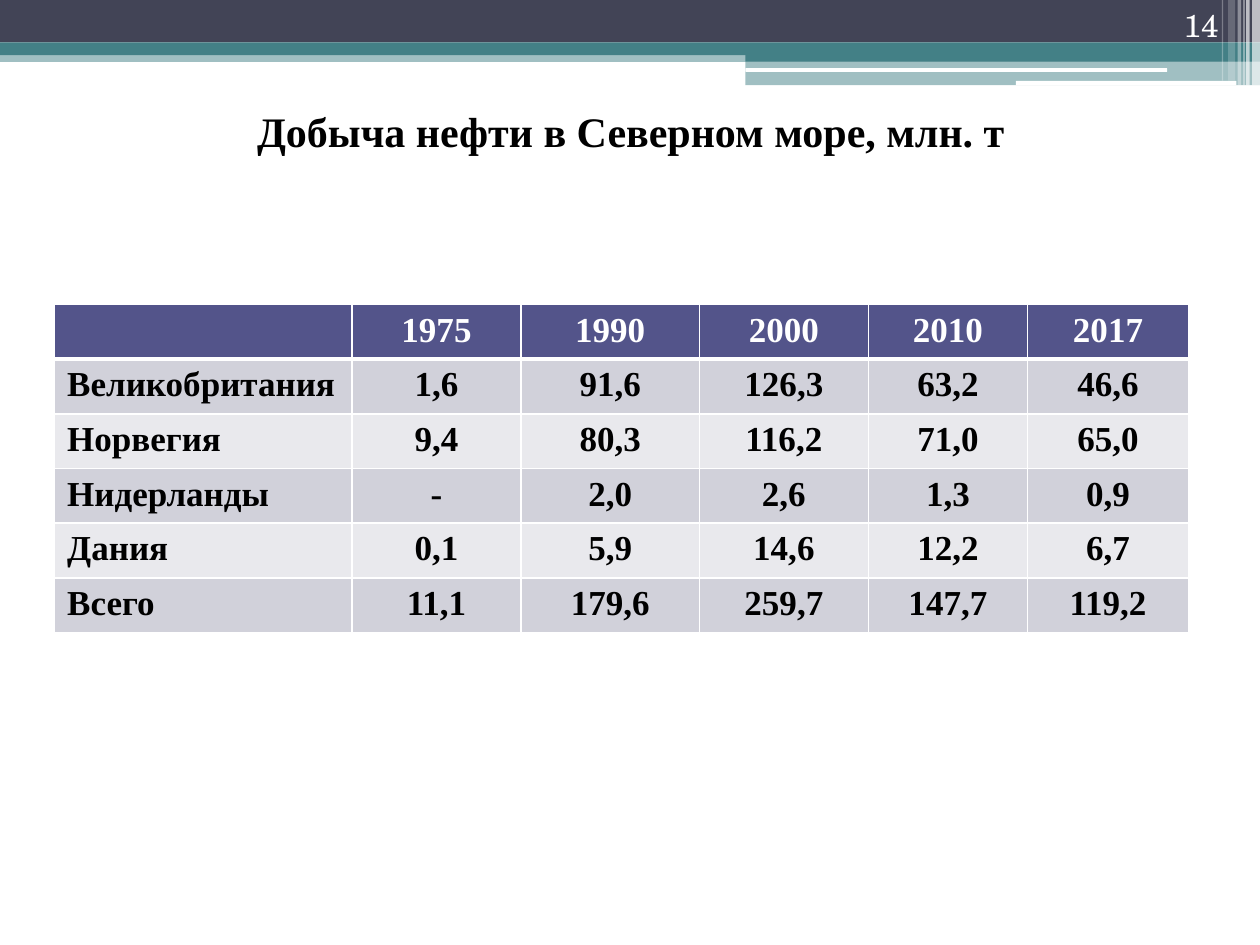
from dataclasses import dataclass

from lxml import etree
from pptx import Presentation
from pptx.dml.color import RGBColor
from pptx.enum.shapes import MSO_SHAPE
from pptx.enum.text import MSO_ANCHOR, PP_ALIGN
from pptx.oxml.ns import qn
from pptx.util import Pt

RECT, ROUND = MSO_SHAPE.RECTANGLE, MSO_SHAPE.ROUNDED_RECTANGLE
LEFT, CENTER, RIGHT = PP_ALIGN.LEFT, PP_ALIGN.CENTER, PP_ALIGN.RIGHT
MIDDLE, BOTTOM = MSO_ANCHOR.MIDDLE, MSO_ANCHOR.BOTTOM


@dataclass(frozen=True)
class Theme:
    navy: str = "424456"
    teal: str = "438086"
    white: str = "FFFFFF"
    black: str = "000000"
    head: str = "53548A"
    bands: tuple = ("D1D1DA", "E9E9ED")
    font: str = "Times New Roman"
    number_font: str = "TeX Gyre Schola"
    title_size: int = 24
    table_size: int = 20
    number_size: int = 18


THEME = Theme()

TITLE = "Добыча нефти в Северном море, млн. т"
ROWS = [
    ("", "1975", "1990", "2000", "2010", "2017"),
    ("Великобритания", "1,6", "91,6", "126,3", "63,2", "46,6"),
    ("Норвегия", "9,4", "80,3", "116,2", "71,0", "65,0"),
    ("Нидерланды", "-", "2,0", "2,6", "1,3", "0,9"),
    ("Дания", "0,1", "5,9", "14,6", "12,2", "6,7"),
    ("Всего", "11,1", "179,6", "259,7", "147,7", "119,2"),
]
COL_WIDTHS = (170, 96.5, 102, 96.5, 91, 92)
ROW_HEIGHT = 29.3


def style_paragraph(p, font, size, color, align, bold=False):
    p.alignment = align
    p.font.name, p.font.size, p.font.bold = font, Pt(size), bold
    p.font.color.rgb = RGBColor.from_string(color)


def add_bar(slide, x, y, w, h, color, opacity=100, kind=RECT):
    sp = slide.shapes.add_shape(kind, Pt(x), Pt(y), Pt(w), Pt(h))
    sp.shadow.inherit = False
    sp.line.fill.background()
    sp.fill.solid()
    sp.fill.fore_color.rgb = RGBColor.from_string(color)
    if opacity < 100:
        clr = sp.fill._xPr.find(f".//{qn('a:srgbClr')}")
        etree.SubElement(clr, qn("a:alpha"), val=str(opacity * 1000))


def add_text(slide, box, text, anchor, **style):
    s = slide.shapes.add_textbox(*map(Pt, box))
    tf = s.text_frame
    tf.word_wrap = True
    tf.vertical_anchor = anchor
    p = tf.paragraphs[0]
    p.text = text
    style_paragraph(p, **style)


def add_banner(slide, x, y, w):
    # Full-width bands
    add_bar(slide, x, y + 28.8, w, 6.6, THEME.teal, 50)
    add_bar(slide, x, y, w, 24.3, THEME.navy)
    add_bar(slide, x, y + 24.3, w, 7.2, THEME.teal)

    # Deeper block on the right
    block_w = 294
    block_x = x + w - block_w
    add_bar(slide, block_x, y + 28.1, block_w, 7.2, THEME.teal)
    add_bar(slide, block_x, y + 35.3, block_w, 13.4, THEME.teal, 50)
    add_bar(slide, block_x, y + 38.9, 241, 2.2, THEME.white, kind=ROUND)
    add_bar(slide, x + w - 139.5, y + 46.2, 126, 2.6, THEME.white, kind=ROUND)

    # Pale vertical stripes: distance from right edge, width, height, opacity
    stripes = [(4.5, 4.5, 48.9, 65), (7.9, 2, 48.9, 65), (9.5, 0.7, 48.9, 60),
               (12.8, 2, 48.9, 40), (18.2, 4, 46.1, 20), (21.8, 0.7, 46.1, 30)]
    for offset, width, height, opacity in stripes:
        add_bar(slide, x + w - offset, y, width, height, THEME.white, opacity)


def set_borders(cell, top, bottom):
    tc_pr = cell._tc.get_or_add_tcPr()
    for side, width in (("L", 1), ("R", 1), ("T", top), ("B", bottom)):
        ln = etree.SubElement(tc_pr, qn(f"a:ln{side}"), w=str(Pt(width)))
        fill = etree.SubElement(ln, qn("a:solidFill"))
        etree.SubElement(fill, qn("a:srgbClr"), val=THEME.white)


def add_production_table(slide, x, y):
    frame = slide.shapes.add_table(len(ROWS), len(COL_WIDTHS), Pt(x), Pt(y),
                                   Pt(sum(COL_WIDTHS)), Pt(ROW_HEIGHT * len(ROWS)))
    table = frame.table
    for col, width in zip(table.columns, COL_WIDTHS):
        col.width = Pt(width)
    for i, values in enumerate(ROWS):
        table.rows[i].height = Pt(ROW_HEIGHT)
        fill = THEME.bands[(i - 1) % 2] if i else THEME.head
        color = THEME.black if i else THEME.white
        for j, value in enumerate(values):
            cell = table.cell(i, j)
            set_borders(cell, top=3 if i == 1 else 1, bottom=1 if i else 3)
            cell.fill.solid()
            cell.fill.fore_color.rgb = RGBColor.from_string(fill)
            p = cell.text_frame.paragraphs[0]
            p.text = value
            style_paragraph(p, THEME.font, THEME.table_size, color,
                            CENTER if j else LEFT, bold=True)


def main():
    prs = Presentation()
    prs.slide_width, prs.slide_height = Pt(720), Pt(540)
    slide = prs.slides.add_slide(prs.slide_layouts[6])

    add_banner(slide, 0, 0, 720)
    add_text(slide, (36.5, 55, 648, 39.6), TITLE, MIDDLE, font=THEME.font,
             size=THEME.title_size, color=THEME.black, align=CENTER, bold=True)
    add_production_table(slide, 31.2, 174)
    add_text(slide, (643.7, 0, 59.8, 28.8), "14", BOTTOM, font=THEME.number_font,
             size=THEME.number_size, color=THEME.white, align=RIGHT)

    prs.save("out.pptx")


if __name__ == "__main__":
    main()
